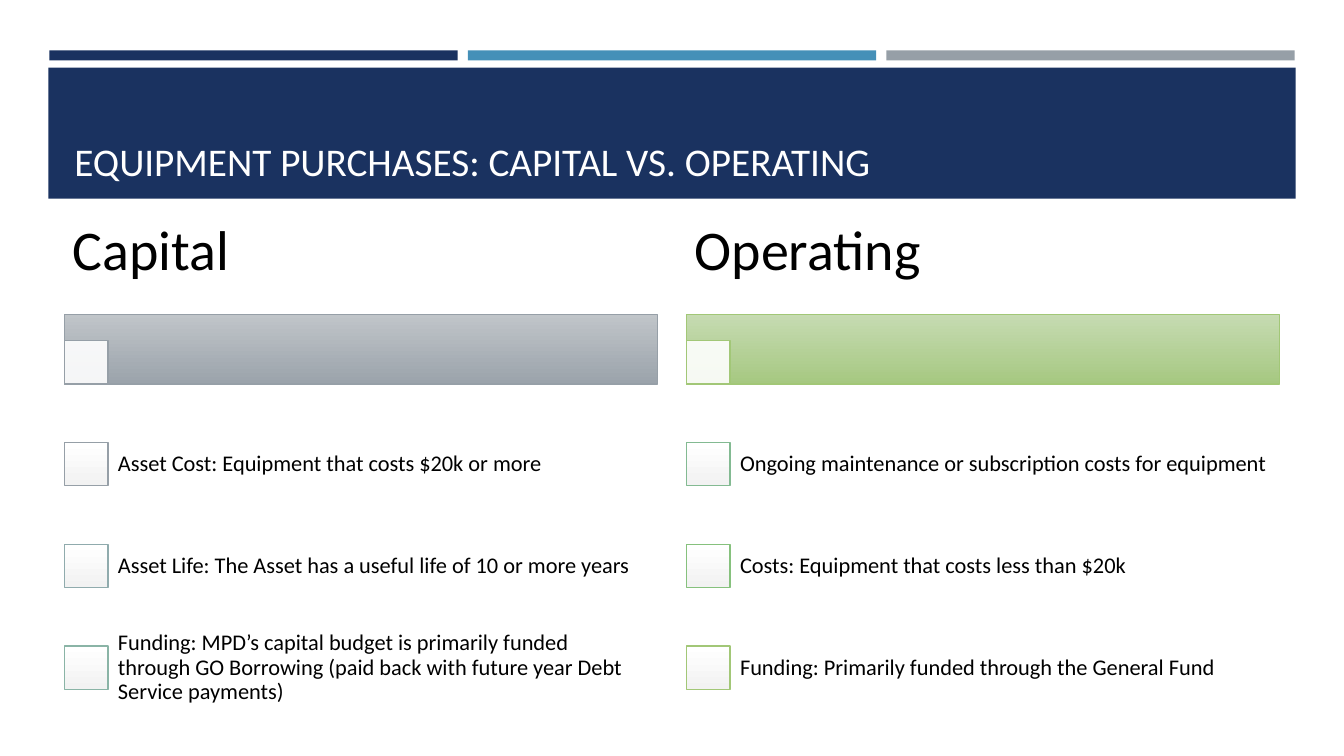
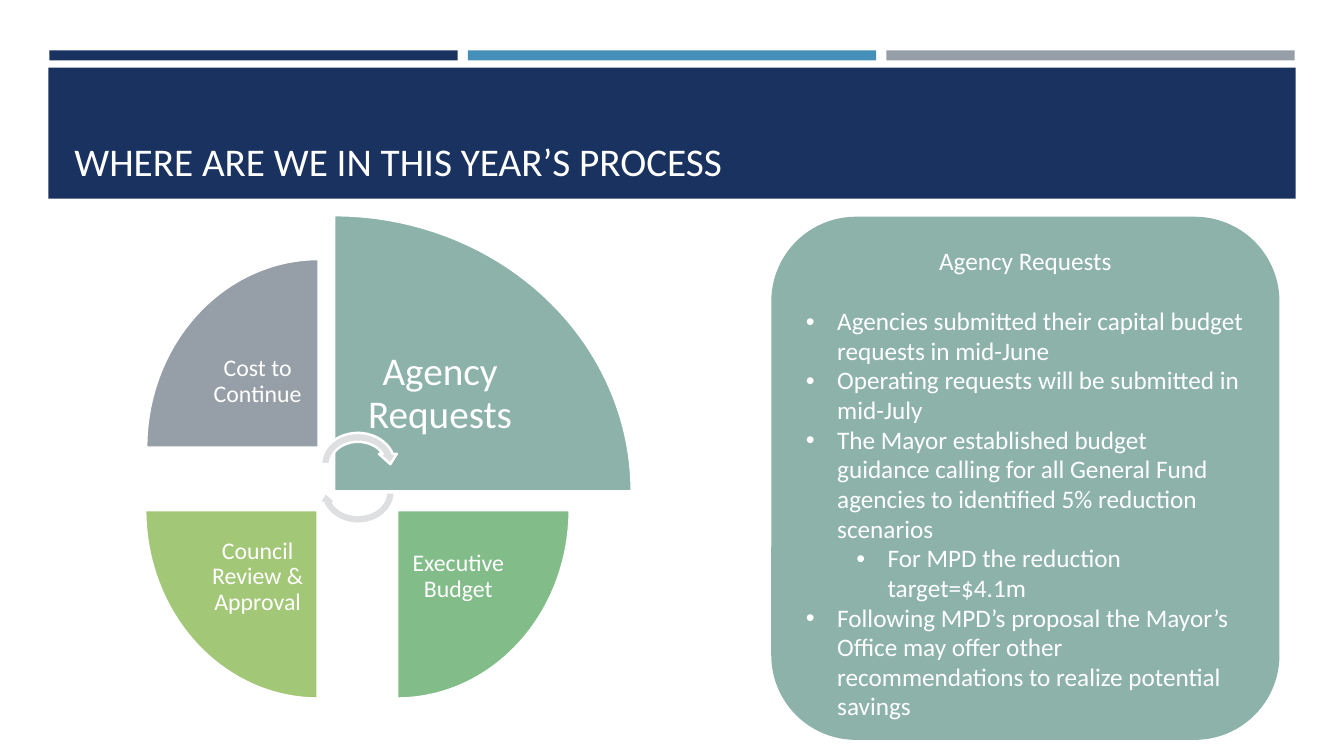
from dataclasses import dataclass

import pptx
import pptx.dml.color
import pptx.enum.shapes
import pptx.enum.text
import pptx.util
from lxml import etree
from pptx.oxml.ns import qn

PX = 9144  # 100 px to the inch
FONT = "Calibri"
NAVY, BLUE, GREY, WHITE, BLACK = "1A3260", "4590B8", "969FA7", "FFFFFF", "000000"
TEAL, GREEN, LIME, PALE = "8CB2AA", "81BC89", "A2C777", "DDDFE1"
KIND = pptx.enum.shapes.MSO_SHAPE
ALIGN = pptx.enum.text.PP_ALIGN
ANCHOR = pptx.enum.text.MSO_ANCHOR


@dataclass(frozen=True)
class Box:
    left: int
    top: int
    width: int
    height: int

    def emu(self) -> list[int]:
        return [n * PX for n in (self.left, self.top, self.width, self.height)]


@dataclass(frozen=True)
class Item:
    text: str
    edge: str


@dataclass(frozen=True)
class Column:
    left: int
    head: str
    grad: tuple[str, str]
    edge: str
    items: tuple[Item, ...]


@dataclass(frozen=True)
class Wedge:
    box: Box
    turn: int
    fill: str
    text: str
    label: Box
    size: int = 17
    inset: int = 13


@dataclass(frozen=True)
class Point:
    text: str
    level: int = 0


COLUMNS = (
    Column(64, "Capital", ("C0C5C9", "9BA3AB"), GREY, (
        Item("Asset Cost: Equipment that costs $20k or more", GREY),
        Item("Asset Life: The Asset has a useful life of 10 or more years", "90ABAD"),
        Item("Funding: MPD’s capital budget is primarily funded through GO Borrowing "
             "(paid back with future year Debt Service payments)", "8AB4A6"),
    )),
    Column(681, "Operating", ("C6DBB2", "A6C881"), LIME, (
        Item("Ongoing maintenance or subscription costs for equipment", "83BA92"),
        Item("Costs: Equipment that costs less than $20k", "86C17D"),
        Item("Funding: Primarily funded through the General Fund", LIME),
    )),
)

WEDGES = (
    Wedge(Box(145, 257, 171, 187), 0, GREY, "Cost to Continue", Box(195, 312, 121, 133)),
    Wedge(Box(342, 203, 274, 295), 90, TEAL, "Agency Requests",
          Box(332, 294, 209, 194), 28, 22),
    Wedge(Box(394, 506, 171, 187), 180, GREEN, "Executive Budget",
          Box(394, 506, 121, 133)),
    Wedge(Box(136, 514, 187, 171), 270, LIME, "Council Review & Approval",
          Box(195, 506, 121, 133)),
)

POINTS = (
    Point("Agencies submitted their capital budget requests in mid-June"),
    Point("Operating requests will be submitted in mid-July"),
    Point("The Mayor established budget guidance calling for all General Fund "
          "agencies to identified 5% reduction scenarios"),
    Point("For MPD the reduction target=$4.1m", 1),
    Point("Following MPD’s proposal the Mayor’s Office may offer other "
          "recommendations to realize potential savings"),
)


def rgb(code: str) -> pptx.dml.color.RGBColor:
    return pptx.dml.color.RGBColor.from_string(code)


def draw(slide, kind, box: Box, fill: str | tuple[str, str], edge: str = "",
         width: float = 1, turn: int = 0):
    """Add a shape; a pair of fill colours makes a gradient from top to bottom."""
    shape = slide.shapes.add_shape(kind, *box.emu())
    shape.shadow.inherit = False
    shape.rotation = turn
    if isinstance(fill, tuple):
        shape.fill.gradient()
        shape.fill.gradient_angle = 270
        for stop, code in zip(shape.fill.gradient_stops, fill):
            stop.color.rgb = rgb(code)
    else:
        shape.fill.solid()
        shape.fill.fore_color.rgb = rgb(fill)
    if edge:
        shape.line.color.rgb = rgb(edge)
        shape.line.width = pptx.util.Pt(width)
    else:
        shape.line.fill.background()
    return shape


def fade(shape, share: int) -> None:
    """Make a solid fill opaque by the given percentage."""
    color = shape._element.spPr.find(qn("a:solidFill")).find(qn("a:srgbClr"))
    etree.SubElement(color, qn("a:alpha"), val=str(share * 1000))


def style(para, size: int, color: str, align=ALIGN.LEFT, lead: float = 1.0) -> None:
    para.alignment = align
    para.line_spacing = lead
    para.font.name = FONT
    para.font.size = pptx.util.Pt(size)
    para.font.color.rgb = rgb(color)


def label(slide, box: Box, text: str, size: int, color: str, inset: tuple[int, int],
          anchor=ANCHOR.MIDDLE, align=ALIGN.LEFT, lead: float = 0.9) -> None:
    frame = slide.shapes.add_textbox(*box.emu()).text_frame
    frame.word_wrap = True
    frame.vertical_anchor = anchor
    frame.margin_left = frame.margin_right = inset[0] * PX
    frame.margin_top = frame.margin_bottom = inset[1] * PX
    para = frame.paragraphs[0]
    para.text = text
    style(para, size, color, align, lead)


def bullet(para, level: int) -> None:
    para.level = level
    props = para._p.get_or_add_pPr()
    props.set("marL", str((31 + 50 * level) * PX))
    props.set("indent", str(-31 * PX))
    etree.SubElement(props, qn("a:buFont"), typeface="Arial")
    etree.SubElement(props, qn("a:buChar"), char="•")


def start(deck, title: str):
    """Add a slide with the shared bands and title."""
    slide = deck.slides.add_slide(deck.slide_layouts[6])
    for i, color in enumerate((NAVY, BLUE, GREY)):
        draw(slide, KIND.RECTANGLE, Box(49 + 415 * i, 50, 405, 10), color)
    draw(slide, KIND.RECTANGLE, Box(48, 67, 1237, 130), NAVY)
    label(slide, Box(64, 77, 1206, 111), title, 28, WHITE, (10, 5),
          ANCHOR.BOTTOM, lead=1.0)
    return slide


def compare(slide, col: Column) -> None:
    side, wide = 43, 588
    draw(slide, KIND.RECTANGLE, Box(col.left, 312, wide, 69), col.grad, col.edge)
    tile = draw(slide, KIND.RECTANGLE, Box(col.left, 338, side, side), WHITE, col.edge)
    fade(tile, 90)
    label(slide, Box(col.left, 188, wide, 124), col.head, 40, BLACK, (8, 6))
    for i, item in enumerate(col.items):
        top = 410 + 101 * i
        draw(slide, KIND.RECTANGLE, Box(col.left, top + 29, side, side),
             (WHITE, "F2F2F2"), item.edge)
        label(slide, Box(col.left + 41, top, wide - 41, 101), item.text, 16, BLACK,
              (12, 12))


def cycle(slide) -> None:
    for part in WEDGES:
        draw(slide, KIND.PIE_WEDGE, part.box, part.fill, WHITE, 1.75, part.turn)
        label(slide, part.label, part.text, part.size, WHITE,
              (part.inset, part.inset), align=ALIGN.CENTER)
    for top, turn in ((425, 0), (453, 180)):
        draw(slide, KIND.CIRCULAR_ARROW, Box(314, top, 82, 71), PALE, WHITE, 1.75, turn)


def panel(slide) -> None:
    card = draw(slide, KIND.ROUNDED_RECTANGLE, Box(765, 215, 504, 519), TEAL)
    frame = card.text_frame
    frame.word_wrap = True
    frame.vertical_anchor = ANCHOR.TOP
    head = frame.paragraphs[0]
    head.text = "Agency Requests"
    style(head, 18, WHITE, ALIGN.CENTER, 0.98)
    head.space_after = pptx.util.Pt(22)
    for point in POINTS:
        para = frame.add_paragraph()
        para.text = point.text
        bullet(para, point.level)
        style(para, 18, WHITE, lead=0.98)


def main() -> None:
    deck = pptx.Presentation()
    deck.slide_width, deck.slide_height = 1333 * PX, 750 * PX
    slide = start(deck, "EQUIPMENT PURCHASES: CAPITAL VS. OPERATING")
    for col in COLUMNS:
        compare(slide, col)
    slide = start(deck, "WHERE ARE WE IN THIS YEAR’S PROCESS")
    cycle(slide)
    panel(slide)
    deck.save("out.pptx")


if __name__ == "__main__":
    main()
